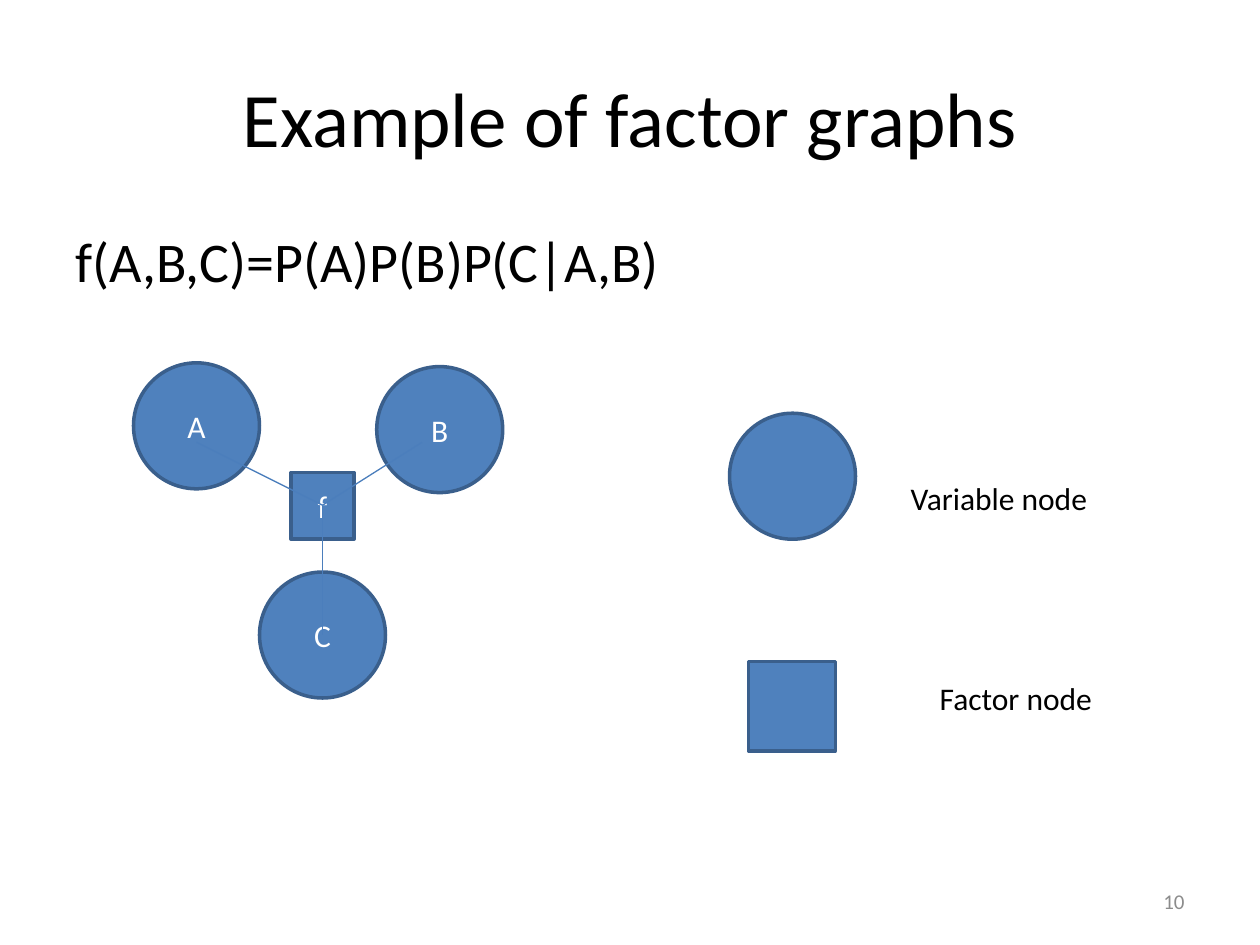
from dataclasses import dataclass

from lxml.etree import SubElement
from pptx import Presentation
from pptx.dml.color import RGBColor
from pptx.enum.shapes import MSO_CONNECTOR, MSO_SHAPE
from pptx.enum.text import MSO_ANCHOR, PP_ALIGN
from pptx.oxml.ns import qn
from pptx.slide import Slide
from pptx.text.text import TextFrame
from pptx.util import Inches, Pt


@dataclass(frozen=True)
class Theme:
    font: str = "Calibri"
    ink: str = "000000"
    muted: str = "8C8C8C"
    node_text: str = "FFFFFF"
    node_fill: str = "4F81BD"
    node_line: str = "3A5F8C"
    edge: str = "4B7EBC"
    title_size: int = 44
    formula_size: int = 32
    label_size: int = 18
    number_size: int = 12
    node_line_width: float = 2
    edge_width: float = 0.75


@dataclass(frozen=True)
class Box:
    left: float
    top: float
    width: float
    height: float

    def lengths(self) -> list[Inches]:
        return [Inches(v) for v in (self.left, self.top, self.width, self.height)]


@dataclass(frozen=True)
class Node:
    kind: MSO_SHAPE
    box: Box
    label: str = ""


@dataclass(frozen=True)
class Edge:
    start: tuple[float, float]
    end: tuple[float, float]


THEME = Theme()


def variable(left: float, top: float, label: str = "") -> Node:
    return Node(MSO_SHAPE.OVAL, Box(left, top, 1, 1), label)


def factor(box: Box, label: str = "") -> Node:
    return Node(MSO_SHAPE.RECTANGLE, box, label)


FACTOR_CENTER = (2.56, 4.01)
GRAPH_NODES = [
    variable(1.06, 2.88, "A"),
    variable(2.99, 2.91, "B"),
    variable(2.06, 4.54, "C"),
    factor(Box(2.31, 3.75, 0.5, 0.53), "f"),
]
EDGES = [
    Edge(FACTOR_CENTER, (3.35, 3.51)),
    Edge((1.56, 3.51), FACTOR_CENTER),
    Edge(FACTOR_CENTER, (2.56, 5.04)),
]
LEGEND = [
    (variable(5.79, 3.28), "Variable node", Box(7.13, 3.75, 2.2, 0.4)),
    (factor(Box(5.94, 5.25, 0.69, 0.71)), "Factor node", Box(7.36, 5.34, 1.97, 0.4)),
]


def write(frame: TextFrame, text: str, *, size: float, color: str = THEME.ink,
          align: PP_ALIGN = PP_ALIGN.LEFT,
          anchor: MSO_ANCHOR = MSO_ANCHOR.TOP) -> None:
    frame.word_wrap = True
    frame.vertical_anchor = anchor
    para = frame.paragraphs[0]
    para.alignment = align
    span = para.add_run()
    span.text = text
    span.font.name = THEME.font
    span.font.size = Pt(size)
    span.font.color.rgb = RGBColor.from_string(color)


def add_text(page: Slide, box: Box, text: str, **text_format) -> None:
    write(page.shapes.add_textbox(*box.lengths()).text_frame, text, **text_format)


def add_node(page: Slide, node: Node) -> None:
    shape = page.shapes.add_shape(node.kind, *node.box.lengths())
    shape.shadow.inherit = False
    shape.fill.solid()
    shape.fill.fore_color.rgb = RGBColor.from_string(THEME.node_fill)
    shape.line.color.rgb = RGBColor.from_string(THEME.node_line)
    shape.line.width = Pt(THEME.node_line_width)
    if node.label:
        write(shape.text_frame, node.label, size=THEME.label_size,
              color=THEME.node_text, align=PP_ALIGN.CENTER, anchor=MSO_ANCHOR.MIDDLE)


def add_edge(page: Slide, edge: Edge) -> None:
    ends = [Inches(v) for v in (*edge.start, *edge.end)]
    line = page.shapes.add_connector(MSO_CONNECTOR.STRAIGHT, *ends)
    line.line.color.rgb = RGBColor.from_string(THEME.edge)
    line.line.width = Pt(THEME.edge_width)
    SubElement(line._element.spPr, qn("a:effectLst"))


def main() -> None:
    deck = Presentation()
    deck.slide_width, deck.slide_height = Inches(10), Inches(7.5)
    page = deck.slides.add_slide(deck.slide_layouts[6])

    add_text(page, Box(0.5, 0.3, 9, 1.25), "Example of factor graphs",
             size=THEME.title_size, align=PP_ALIGN.CENTER, anchor=MSO_ANCHOR.MIDDLE)
    add_text(page, Box(0.5, 1.75, 9, 4.95), "f(A,B,C)=P(A)P(B)P(C|A,B)",
             size=THEME.formula_size)
    for node in GRAPH_NODES:
        add_node(page, node)
    for edge in EDGES:
        add_edge(page, edge)
    for node, label, box in LEGEND:
        add_node(page, node)
        add_text(page, box, label, size=THEME.label_size)
    add_text(page, Box(7.17, 6.95, 2.33, 0.4), "10", size=THEME.number_size,
             color=THEME.muted, align=PP_ALIGN.RIGHT, anchor=MSO_ANCHOR.MIDDLE)

    deck.save("out.pptx")


if __name__ == "__main__":
    main()
